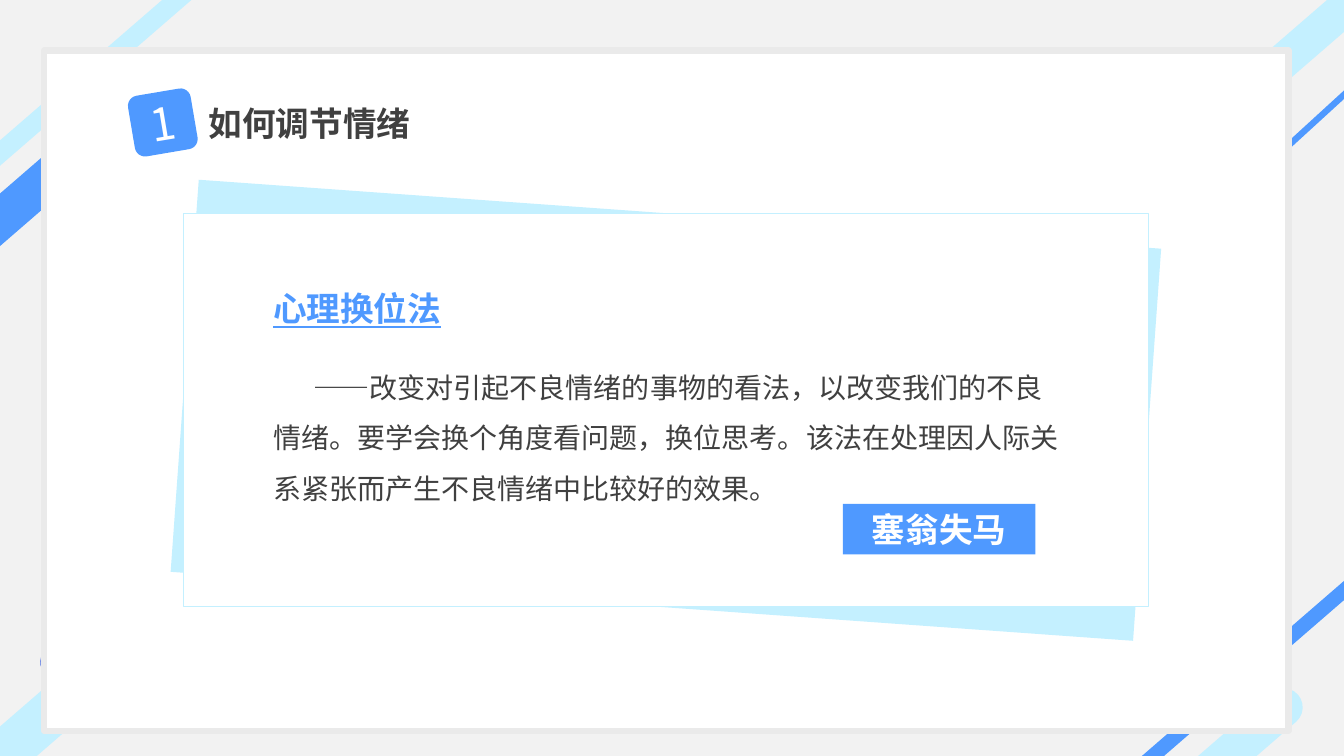
from dataclasses import dataclass
from pptx import Presentation
from pptx.dml.color import RGBColor as RGB
from pptx.enum.shapes import MSO_CONNECTOR as LINK, MSO_SHAPE as SHAPE
from pptx.enum.text import MSO_ANCHOR as ANCHOR, MSO_AUTO_SIZE as FIT, PP_ALIGN as ALIGN
from pptx.oxml.ns import qn
from pptx.util import Inches, Pt


@dataclass(frozen=True)
class Theme:
    font: str = "Noto Sans CJK SC"
    back: RGB = RGB(0xF2, 0xF2, 0xF2)
    white: RGB = RGB(0xFF, 0xFF, 0xFF)
    edge: RGB = RGB(0xEA, 0xEA, 0xEA)
    blue: RGB = RGB(0x4F, 0x99, 0xFF)
    pale: RGB = RGB(0xC4, 0xF0, 0xFF)
    deep: RGB = RGB(0x4A, 0x6C, 0xE1)
    ink: RGB = RGB(0x40, 0x40, 0x40)
    badge: Pt = Pt(32)
    head: Pt = Pt(24)
    body: Pt = Pt(20)


theme = Theme()
deck = Presentation()
deck.slide_width, deck.slide_height = Inches(13.33), Inches(7.5)
slide = deck.slides.add_slide(deck.slide_layouts[5])
slide.background.fill.solid()
slide.background.fill.fore_color.rgb = theme.back
shapes = slide.shapes


def block(kind, box, fill, line=None, width=1, turn=0):
    shape = shapes.add_shape(kind, *[Inches(n) for n in box])
    shape.shadow.inherit = False
    shape.rotation = turn
    shape.fill.solid()
    shape.fill.fore_color.rgb = fill
    if line is None:
        shape.line.fill.background()
    else:
        shape.line.color.rgb = line
        shape.line.width = Pt(width)
    return shape


def style(para, size, color, bold=False):
    for run in para.runs:
        font = run.font
        font.name, font.size, font.bold = theme.font, size, bold
        font.color.rgb = color
        east = font._element.makeelement(qn("a:ea"), {"typeface": theme.font})
        font._element.find(qn("a:latin")).addnext(east)


stripes = [
    (-2.89, 2.38, 0.38, theme.blue, theme.blue),
    (-2.02, 1.06, 0.19, theme.pale, None),
    (10.19, 6.4, 0.13, theme.blue, theme.blue),
    (8.59, 8.3, 0.38, theme.pale, None),
    (9.99, 0.69, 0.35, theme.pale, None),
    (-3.28, 8.01, 0.46, theme.pale, None),
    (-0.16, 4.92, 0.3, theme.deep, None),
]
for left, top, height, fill, line in stripes:
    stripe = block(SHAPE.ROUNDED_RECTANGLE, (left, top, 4.88, height), fill, line, turn=319.1)
    stripe.adjustments[0] = 0.5

streak = shapes.add_connector(LINK.STRAIGHT, Inches(11.44), Inches(2.67), Inches(14.75), Inches(-0.36))
streak.line.color.rgb = theme.blue
streak.line.width = Pt(4.5)
props = streak.element.spPr
props.append(props.makeelement(qn("a:effectLst"), {}))

block(SHAPE.RECTANGLE, (0.44, 0.5, 12.34, 6.75), theme.white, theme.edge, 4.5)
panel = (1.82, 2.12, 9.57, 3.9)
block(SHAPE.RECTANGLE, panel, theme.pale, turn=4.1)
block(SHAPE.RECTANGLE, panel, theme.white, theme.pale)

note = shapes.add_textbox(Inches(2.61), Inches(2.61), Inches(8.11), Inches(2.52))
frame = note.text_frame
frame.word_wrap = True
frame.text = (
    "心理换位法\n"
    "——改变对引起不良情绪的事物的看法，以改变我们的不良情绪。"
    "要学会换个角度看问题，换位思考。该法在处理因人际关系紧张而产生不良情绪中比较好的效果。"
)
lead, body = frame.paragraphs
lead.line_spacing = body.line_spacing = 1.5
style(lead, theme.head, theme.blue, True)
lead.runs[0].font.underline = True
style(body, theme.body, theme.ink)
body.space_before = Pt(18)
body._p.get_or_add_pPr().set("indent", str(Inches(0.4)))

label = block(SHAPE.RECTANGLE, (8.36, 5, 1.91, 0.5), theme.blue)
badge = block(SHAPE.ROUNDED_RECTANGLE, (1.3, 0.91, 0.63, 0.61), theme.blue, turn=350.4)
for shape, text, size, bold in [
    (label, "塞翁失马", theme.head, True),
    (badge, "1", theme.badge, False),
]:
    frame = shape.text_frame
    frame.text = text
    frame.vertical_anchor = ANCHOR.MIDDLE
    frame.paragraphs[0].alignment = ALIGN.CENTER
    style(frame.paragraphs[0], size, theme.white, bold)

title = shapes.title
title.left, title.top, title.width, title.height = [Inches(n) for n in (1.97, 0.97, 2.22, 0.5)]
frame = title.text_frame
frame.text = "如何调节情绪"
frame.word_wrap = False
frame.auto_size = FIT.NONE
frame.vertical_anchor = ANCHOR.MIDDLE
frame.paragraphs[0].alignment = ALIGN.LEFT
style(frame.paragraphs[0], theme.head, theme.ink, True)
title.element.getparent().append(title.element)

deck.save("out.pptx")
